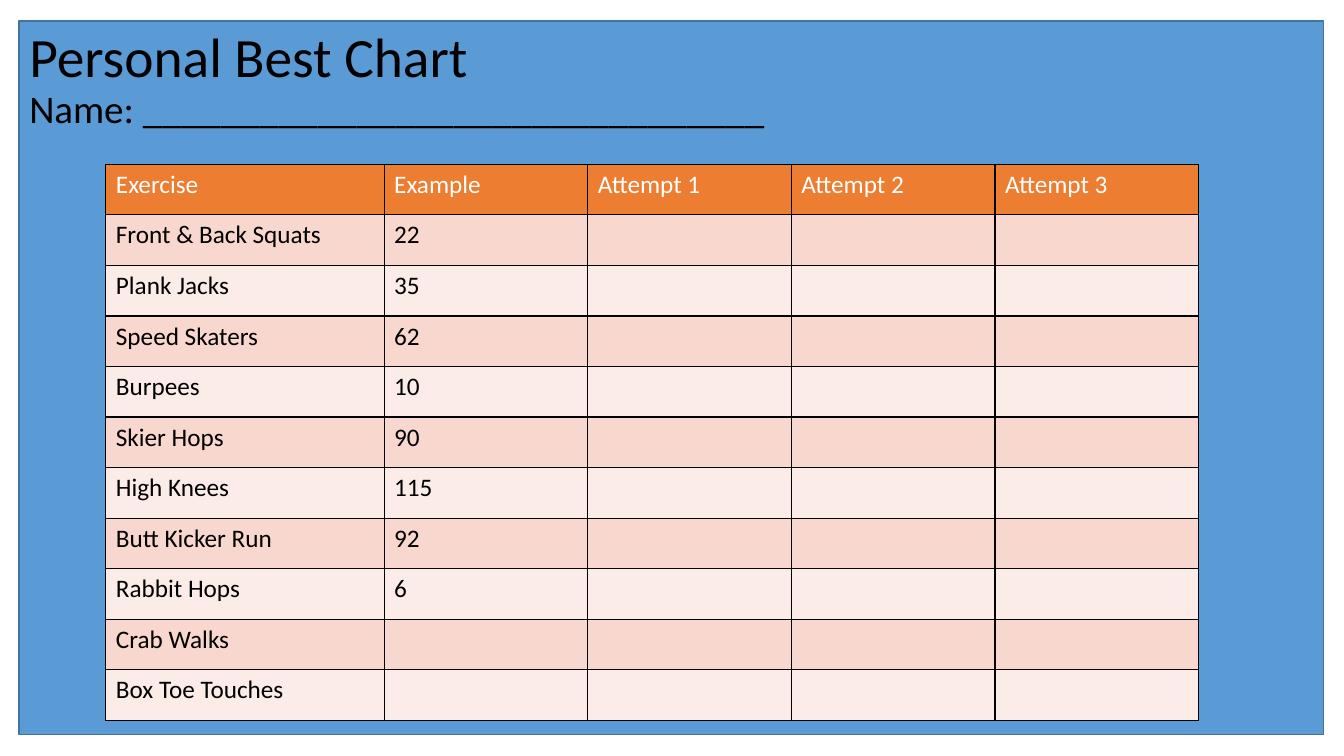
import copy
from dataclasses import dataclass

import pptx
import pptx.dml.color
import pptx.enum.shapes
import pptx.enum.text
import pptx.oxml
import pptx.oxml.ns
import pptx.util
from pptx.util import Inches


@dataclass(frozen=True)
class Theme:
    font: str = "Calibri"
    panel: str = "5B9BD5"
    panel_line: str = "43739E"
    header: str = "ED7D31"
    bands: tuple = ("F8D7CE", "FCECE8")
    light: str = "FFFFFF"
    dark: str = "000000"
    title_size: float = 39.6
    name_size: float = 27.9
    table_size: float = 18
    line_width: float = 1


THEME = Theme()
HEADINGS = ("Exercise", "Example", "Attempt 1", "Attempt 2", "Attempt 3")
EXERCISES = (
    ("Front & Back Squats", "22"),
    ("Plank Jacks", "35"),
    ("Speed Skaters", "62"),
    ("Burpees", "10"),
    ("Skier Hops", "90"),
    ("High Knees", "115"),
    ("Butt Kicker Run", "92"),
    ("Rabbit Hops", "6"),
    ("Crab Walks", ""),
    ("Box Toe Touches", ""),
)


def color(value):
    return pptx.dml.color.RGBColor.from_string(value)


def add_run(paragraph, text, size, text_color):
    run = paragraph.add_run()
    run.text = text
    run.font.name = THEME.font
    run.font.size = pptx.util.Pt(size)
    run.font.bold = False
    run.font.color.rgb = color(text_color)
    return run


def add_panel(slide):
    panel = slide.shapes.add_shape(
        pptx.enum.shapes.MSO_SHAPE.RECTANGLE,
        Inches(0.19), Inches(0.21), Inches(12.94), Inches(7.08),
    )
    panel.shadow.inherit = False
    panel.fill.solid()
    panel.fill.fore_color.rgb = color(THEME.panel)
    panel.line.color.rgb = color(THEME.panel_line)
    panel.line.width = pptx.util.Pt(THEME.line_width)


def add_borders(cell):
    properties = cell._tc.get_or_add_tcPr()
    namespace = pptx.oxml.ns.nsdecls("a")
    width = pptx.util.Pt(THEME.line_width)
    for side in ("lnL", "lnR", "lnT", "lnB"):
        properties.append(pptx.oxml.parse_xml(
            f'<a:{side} {namespace} w="{width}"><a:solidFill>'
            f'<a:srgbClr val="{THEME.dark}"/></a:solidFill></a:{side}>'
        ))


def format_cell(cell, text, fill, text_color):
    add_borders(cell)
    cell.fill.solid()
    cell.fill.fore_color.rgb = color(fill)
    if text:
        add_run(cell.text_frame.paragraphs[0], text, THEME.table_size, text_color)


def add_exercise_table(slide):
    row_count = len(EXERCISES) + 1
    table = slide.shapes.add_table(
        row_count, len(HEADINGS),
        Inches(1.05), Inches(1.63), Inches(10.82), Inches(5.52),
    ).table
    for index, column in enumerate(table.columns):
        column.width = Inches(2.02 if index else 2.76)
    for row in table.rows:
        row.height = Inches(5.52 / row_count)
    for index, heading in enumerate(HEADINGS):
        format_cell(table.cell(0, index), heading, THEME.header, THEME.light)
    for row_index, exercise in enumerate(EXERCISES):
        band = THEME.bands[row_index % 2]
        for index in range(len(HEADINGS)):
            text = exercise[index] if index < len(exercise) else ""
            format_cell(table.cell(row_index + 1, index), text, band, THEME.dark)


def place_title(slide):
    title = slide.shapes.title
    slide.shapes._spTree.append(title._element)
    title.left, title.top = Inches(0.19), Inches(0.21)
    title.width, title.height = Inches(10.51), Inches(1.18)
    frame = title.text_frame
    frame.word_wrap = True
    frame.auto_size = pptx.enum.text.MSO_AUTO_SIZE.NONE
    frame.vertical_anchor = pptx.enum.text.MSO_ANCHOR.MIDDLE
    paragraph = frame.paragraphs[0]
    paragraph.alignment = pptx.enum.text.PP_ALIGN.LEFT
    paragraph.line_spacing = 0.9
    heading = add_run(paragraph, "Personal Best Chart", THEME.title_size, THEME.dark)
    paragraph.add_line_break()
    line_break = paragraph._p[-1]
    line_break.append(copy.deepcopy(heading._r.rPr))
    add_run(paragraph, "Name: ________________________________", THEME.name_size, THEME.dark)


def main():
    presentation = pptx.Presentation()
    presentation.slide_width = Inches(13.33)
    presentation.slide_height = Inches(7.5)
    slide = presentation.slides.add_slide(presentation.slide_layouts[5])
    add_panel(slide)
    add_exercise_table(slide)
    place_title(slide)
    presentation.save("out.pptx")


if __name__ == "__main__":
    main()
